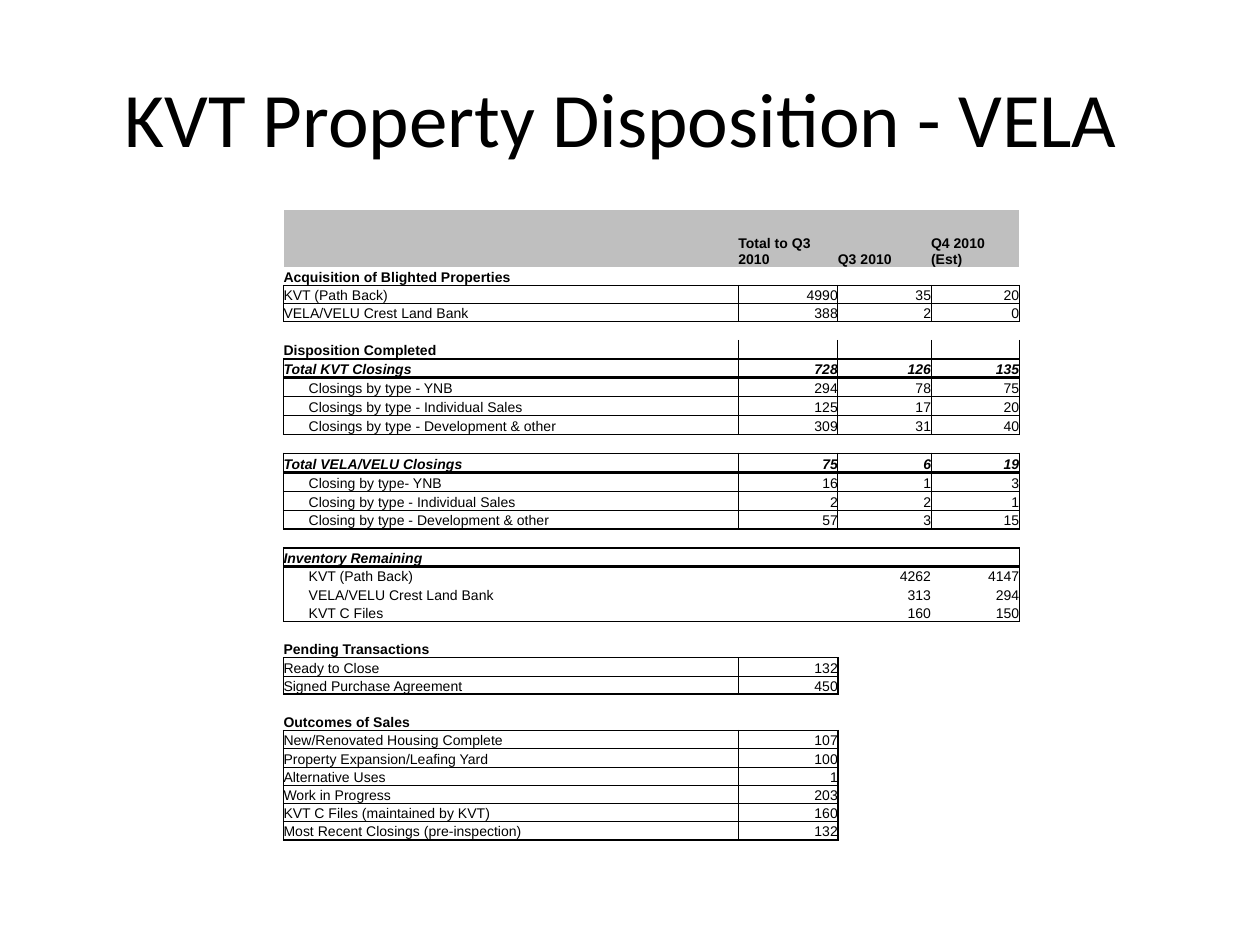
from dataclasses import dataclass
from functools import partial
from typing import Any

from lxml.etree import SubElement
from pptx import Presentation
from pptx.dml.color import RGBColor as Rgb
from pptx.enum.text import MSO_ANCHOR as Anchor, PP_ALIGN as Align
from pptx.oxml.ns import qn
from pptx.util import Inches, Pt

COLORS = {"ink": "000000", "header": "BFBFBF"}
PLAIN_TABLE = "{2D5ABB26-0587-4C30-8999-92F81FD0307C}"
COLUMN_WIDTHS = (3.61, 0.79, 0.74, 0.7)
TABLE_HEIGHT, HEADER_HEIGHT, CLOSING_HEIGHT = 5, 0.45, 0.15
CLOSING_ROWS = range(5, 17)
THIN, MEDIUM, THICK = 0.5, 1, 2


@dataclass(frozen=True)
class Row:
    label: str = ""
    values: tuple = ()
    below: float = 0
    left: float = 0
    inner: float = 0
    right: float = 0
    span: int = 4
    indent: float = 0
    bold: bool = False
    italic: bool = False
    underline: bool = False
    header: bool = False

    def edge(self, position: int) -> float:
        if position == 0:
            return self.left
        if position < self.span:
            return self.inner
        return self.right if position == self.span else 0


Section = partial(Row, bold=True)
Acquired = partial(Row, below=THIN, left=THIN, inner=THIN, right=THIN)
Boxed = partial(Row, below=THIN, left=MEDIUM, inner=THIN, right=MEDIUM)
Total = partial(Boxed, below=THICK, bold=True, italic=True, underline=True)
Closing = partial(Boxed, indent=0.2)
Stock = partial(Row, left=MEDIUM, right=MEDIUM, indent=0.2)
Outcome = partial(Boxed, span=2)

ROWS = [
    Row("", ("Total to Q3 2010", "Q3 2010", "Q4 2010 (Est)"), bold=True, header=True),
    Section("Acquisition of Blighted Properties", below=THIN),
    Acquired("KVT (Path Back)", (4990, 35, 20)),
    Acquired("VELA/VELU Crest Land Bank", (388, 2, 0)),
    Row(),
    Section("Disposition Completed", below=MEDIUM, inner=THIN, right=THIN),
    Total("Total KVT Closings", (728, 126, 135)),
    Closing("Closings by type - YNB", (294, 78, 75)),
    Closing("Closings by type - Individual Sales", (125, 17, 20)),
    Closing("Closings by type - Development & other", (309, 31, 40), below=MEDIUM),
    Row(below=MEDIUM),
    Total("Total VELA/VELU Closings", (75, 6, 19)),
    Closing("Closing by type- YNB", (16, 1, 3)),
    Closing("Closing by type - Individual Sales", (2, 2, 1)),
    Closing("Closing by type - Development & other", (57, 3, 15), below=MEDIUM),
    Row(below=MEDIUM),
    Total("Inventory Remaining", inner=0, underline=False),
    Stock("KVT (Path Back)", ("", 4262, 4147)),
    Stock("VELA/VELU Crest Land Bank", ("", 313, 294)),
    Stock("KVT C Files", ("", 160, 150), below=MEDIUM),
    Row(),
    Section("Pending Transactions", below=THIN, span=2),
    Outcome("Ready to Close", (132,)),
    Outcome("Signed Purchase Agreement", (450,), below=MEDIUM),
    Row(),
    Section("Outcomes of Sales", below=MEDIUM, span=2),
    Outcome("New/Renovated Housing Complete", (107,)),
    Outcome("Property Expansion/Leafing Yard", (100,)),
    Outcome("Alternative Uses", (1,)),
    Outcome("Work in Progress", (203,)),
    Outcome("KVT C Files (maintained by KVT)", (160,)),
    Outcome("Most Recent Closings (pre-inspection)", (132,), below=MEDIUM),
]


def apply_format(target: Any, **values: Any) -> None:
    for name, value in values.items():
        setattr(target, name, value)


def draw_borders(cell: Any, weights: dict[str, float]) -> None:
    properties = cell._tc.get_or_add_tcPr()
    for position, (side, weight) in enumerate(weights.items()):
        line = properties.makeelement(qn(f"a:ln{side}"), {"w": str(Pt(weight))})
        if weight:
            fill = SubElement(line, qn("a:solidFill"))
            SubElement(fill, qn("a:srgbClr"), val=COLORS["ink"])
        else:
            SubElement(line, qn("a:noFill"))
        properties.insert(position, line)


def write_cell(cell: Any, content: Any, row: Row, column: int) -> None:
    apply_format(
        cell,
        vertical_anchor=Anchor.BOTTOM,
        margin_left=Inches(0 if column else row.indent),
        margin_top=0,
        margin_right=0,
        margin_bottom=0,
    )
    paragraph = cell.text_frame.paragraphs[0]
    if content == "":
        SubElement(paragraph._p, qn("a:endParaRPr"), sz="800")
        return
    paragraph.alignment = Align.RIGHT if column and not row.header else Align.LEFT
    run = paragraph.add_run()
    run.text = str(content)
    apply_format(
        run.font,
        name="Arial",
        size=Pt(8),
        bold=row.bold,
        italic=row.italic,
        underline=row.underline and column == 0,
    )
    run.font.color.rgb = Rgb.from_string(COLORS["ink"])


def draw_row(table: Any, index: int, row: Row, previous: Row) -> None:
    contents = (row.label, *row.values)
    for column in range(len(COLUMN_WIDTHS)):
        cell = table.cell(index, column)
        write_cell(cell, contents[column] if column < len(contents) else "", row, column)
        if row.header:
            cell.fill.solid()
            cell.fill.fore_color.rgb = Rgb.from_string(COLORS["header"])
        else:
            cell.fill.background()
        draw_borders(cell, {
            "L": row.edge(column),
            "R": row.edge(column + 1),
            "T": previous.below if column < previous.span else 0,
            "B": row.below if column < row.span else 0,
        })


def draw_table(slide: Any) -> None:
    frame = slide.shapes.add_table(
        len(ROWS), len(COLUMN_WIDTHS),
        Inches(2.25), Inches(1.67), Inches(sum(COLUMN_WIDTHS)), Inches(TABLE_HEIGHT),
    )
    table = frame.table
    apply_format(table, first_row=False, horz_banding=False)
    table._tbl.tblPr.find(qn("a:tableStyleId")).text = PLAIN_TABLE
    for column, width in zip(table.columns, COLUMN_WIDTHS):
        column.width = Inches(width)

    closing_total = CLOSING_HEIGHT * len(CLOSING_ROWS)
    regular_count = len(ROWS) - 1 - len(CLOSING_ROWS)
    regular_height = (TABLE_HEIGHT - HEADER_HEIGHT - closing_total) / regular_count
    previous = Row()
    for index, row in enumerate(ROWS):
        height = CLOSING_HEIGHT if index in CLOSING_ROWS else regular_height
        table.rows[index].height = Inches(HEADER_HEIGHT if row.header else height)
        draw_row(table, index, row, previous)
        previous = row


def draw_title(slide: Any) -> None:
    title = slide.shapes.title
    apply_format(title, left=Inches(0.5), top=Inches(0.3), width=Inches(9), height=Inches(1.25))
    title.text_frame.text = "KVT Property Disposition - VELA "
    title.text_frame.vertical_anchor = Anchor.MIDDLE
    paragraph = title.text_frame.paragraphs[0]
    paragraph.alignment = Align.CENTER
    font = paragraph.runs[0].font
    apply_format(font, name="Calibri", size=Pt(44))
    font.color.rgb = Rgb.from_string(COLORS["ink"])


def main() -> None:
    deck = Presentation()
    apply_format(deck, slide_width=Inches(10), slide_height=Inches(7.5))
    slide = deck.slides.add_slide(deck.slide_layouts[5])
    draw_title(slide)
    draw_table(slide)
    deck.save("out.pptx")


if __name__ == "__main__":
    main()
